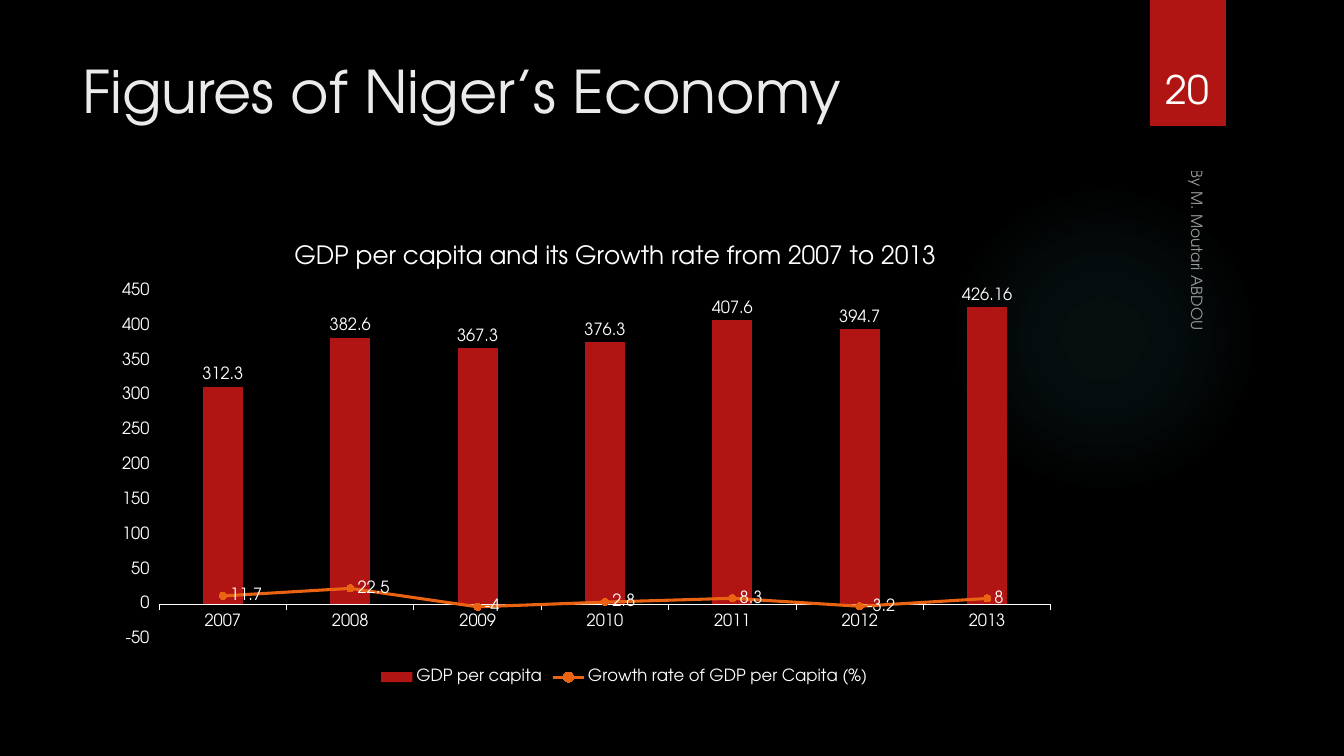
from copy import deepcopy
from dataclasses import dataclass

from pptx import Presentation
from pptx.chart.data import CategoryChartData
from pptx.dml.color import RGBColor
from pptx.enum.chart import (XL_AXIS_CROSSES, XL_CHART_TYPE, XL_LABEL_POSITION,
                             XL_LEGEND_POSITION, XL_MARKER_STYLE, XL_TICK_MARK)
from pptx.enum.shapes import MSO_SHAPE
from pptx.enum.text import MSO_ANCHOR, MSO_AUTO_SIZE, PP_ALIGN
from pptx.oxml import parse_xml
from pptx.oxml.ns import nsdecls, qn
from pptx.util import Pt

COLUMNS, DOT = XL_CHART_TYPE.COLUMN_CLUSTERED, XL_MARKER_STYLE.CIRCLE
ABOVE, BESIDE = XL_LABEL_POSITION.OUTSIDE_END, XL_LABEL_POSITION.RIGHT
TICK_OUT, AXIS_END = XL_TICK_MARK.OUTSIDE, XL_AXIS_CROSSES.MAXIMUM
LEGEND_BELOW = XL_LEGEND_POSITION.BOTTOM
OVAL, RECTANGLE = MSO_SHAPE.OVAL, MSO_SHAPE.RECTANGLE
TOP, BOTTOM, NO_FIT = MSO_ANCHOR.TOP, MSO_ANCHOR.BOTTOM, MSO_AUTO_SIZE.NONE
LEFT, CENTER = PP_ALIGN.LEFT, PP_ALIGN.CENTER

# Content
TITLE = "Figures of Niger’s Economy"
BYLINE = "By M. Moutari ABDOU"
PAGE_NUMBER = "20"
CHART_TITLE = "GDP per capita and its Growth rate from 2007 to 2013"
YEARS = [str(year) for year in range(2007, 2014)]
SERIES = {
    "GDP per capita": (312.3, 382.6, 367.3, 376.3, 407.6, 394.7, 426.16),
    "Growth rate of GDP per Capita (%)": (11.7, 22.5, -4, 2.8, 8.3, -3.2, 8),
}

# Places in px: left, top, width, height
PAGE_SIZE = (1344, 756)
GLOW = (949, 184, 310, 310)
BADGE = (1150, 0, 76, 126)
TITLE_BOX = (72, 50, 1037, 154)
BYLINE_BOX = (987, 356, 425, 33)
NUMBER_BOX = (1141, 32, 93, 85)
CHART_BOX = (122, 226, 986, 463)
PLOT_BOX = (141, 291, 909, 348)
CHART_TITLE_AT = (274, 238)
GLOW_STOPS = ((0, 7), (36, 6), (69, 0))  # position %, opacity %


@dataclass(frozen=True)
class Theme:
    font: str = "TeX Gyre Adventor"
    background: str = "000000"
    text: str = "FFFFFF"
    heading: str = "EBEBEB"
    red: str = "B01513"
    orange: str = "EA6312"
    glow: str = "50B9C1"
    title_size: int = 42
    number_size: int = 28
    chart_title_size: int = 18
    chart_size: int = 12
    byline_size: int = 11


THEME = Theme()


def px(*lengths):
    return [round(length * 914400 / 100.8) for length in lengths]


def paint(fill, color):
    fill.solid()
    fill.fore_color.rgb = RGBColor.from_string(color)


def style_font(font, size, color=THEME.text):
    font.name, font.size, font.bold = THEME.font, Pt(size), False
    font.color.rgb = RGBColor.from_string(color)


def write(frame, text, size, color=THEME.text, anchor=BOTTOM, align=LEFT):
    frame.word_wrap, frame.auto_size = True, NO_FIT
    frame.vertical_anchor = anchor
    para = frame.paragraphs[0]
    para.alignment = align
    span = para.add_run()
    span.text = text
    style_font(span.font, size, color)
    return span


def add_panel(page, kind, place):
    panel = page.shapes.add_shape(kind, *px(*place))
    panel.shadow.inherit = False
    panel.line.fill.background()
    return panel


def set_layout(parent, index, left, top, width=None, height=None, inner=False):
    """Place a chart part by fractions of the chart box."""
    old = parent.find(qn("c:layout"))
    if old is not None:
        parent.remove(old)
    chart_left, chart_top, chart_width, chart_height = CHART_BOX
    parts = '<c:layoutTarget val="inner"/>' if inner else ""
    parts += '<c:xMode val="edge"/><c:yMode val="edge"/>'
    parts += f'<c:x val="{(left - chart_left) / chart_width:.3f}"/>'
    parts += f'<c:y val="{(top - chart_top) / chart_height:.3f}"/>'
    if width:
        parts += f'<c:w val="{width / chart_width:.3f}"/>'
        parts += f'<c:h val="{height / chart_height:.3f}"/>'
    parent.insert(index, parse_xml(
        f'<c:layout {nsdecls("c")}><c:manualLayout>{parts}</c:manualLayout></c:layout>'))


def move_to_line(bar_plot):
    """Turn the second column series into a line on the same axes."""
    bars = bar_plot._element
    growth = bars.findall(qn("c:ser"))[1]
    invert = growth.find(qn("c:invertIfNegative"))
    if invert is not None:
        growth.remove(invert)
    lines = parse_xml(f'<c:lineChart {nsdecls("c")}><c:grouping val="standard"/>'
                      '<c:varyColors val="0"/></c:lineChart>')
    lines.append(growth)
    lines.append(parse_xml(f'<c:marker {nsdecls("c")} val="1"/>'))
    for axis_id in bars.findall(qn("c:axId")):
        lines.append(deepcopy(axis_id))
    bars.addnext(lines)


def label_values(series, position):
    labels = series.data_labels
    labels.show_value, labels.position = True, position
    style_font(labels.font, THEME.chart_size)


def add_chart(page):
    data = CategoryChartData()
    data.categories = YEARS
    for name, values in SERIES.items():
        data.add_series(name, values)
    chart = page.shapes.add_chart(COLUMNS, *px(*CHART_BOX), data).chart
    style_font(chart.font, THEME.chart_size)

    # Title, legend and plot area
    chart.has_title = True
    heading = chart.chart_title.text_frame.paragraphs[0].add_run()
    heading.text = CHART_TITLE
    style_font(heading.font, THEME.chart_title_size)
    set_layout(chart.element.xpath("c:chart/c:title")[0], 1, *CHART_TITLE_AT)
    set_layout(chart.element.xpath("c:chart/c:plotArea")[0], 0, *PLOT_BOX, inner=True)
    chart.has_legend = True
    chart.legend.position, chart.legend.include_in_layout = LEGEND_BELOW, False
    style_font(chart.legend.font, THEME.chart_size)

    # Axes
    for axis in (chart.category_axis, chart.value_axis):
        axis.has_major_gridlines = False
        axis.major_tick_mark = TICK_OUT
        style_font(axis.tick_labels.font, THEME.chart_size)
    chart.category_axis.crosses = AXIS_END
    paint(chart.category_axis.format.line.fill, THEME.text)
    chart.category_axis.format.line.width = Pt(0.75)
    values = chart.value_axis
    values.minimum_scale, values.maximum_scale, values.major_unit = -50, 450, 50
    values.format.line.fill.background()

    # Columns and growth line
    bar_plot = chart.plots[0]
    bar_plot.gap_width, bar_plot.overlap, bar_plot.vary_by_categories = 219, -27, False
    move_to_line(bar_plot)
    income = chart.plots[0].series[0]
    paint(income.format.fill, THEME.red)
    label_values(income, ABOVE)
    growth = chart.plots[1].series[0]
    growth.smooth = False
    paint(growth.format.line.fill, THEME.orange)
    growth.format.line.width = Pt(2.25)
    growth.marker.style, growth.marker.size = DOT, 5
    paint(growth.marker.format.fill, THEME.orange)
    paint(growth.marker.format.line.fill, THEME.orange)
    label_values(growth, BESIDE)


def main():
    deck = Presentation()
    deck.slide_width, deck.slide_height = px(*PAGE_SIZE)
    page = deck.slides.add_slide(deck.slide_layouts[5])
    paint(page.background.fill, THEME.background)

    # Glow and page badge
    glow = add_panel(page, OVAL, GLOW)
    glow.fill.background()
    stops = "".join(
        f'<a:gs pos="{place * 1000}"><a:srgbClr val="{THEME.glow}">'
        f'<a:alpha val="{opacity * 1000}"/></a:srgbClr></a:gs>'
        for place, opacity in GLOW_STOPS)
    no_fill = glow._element.spPr.find(qn("a:noFill"))
    no_fill.addnext(parse_xml(
        f'<a:gradFill {nsdecls("a")}><a:gsLst>{stops}</a:gsLst><a:path path="circle">'
        '<a:fillToRect l="50000" t="50000" r="50000" b="50000"/></a:path></a:gradFill>'))
    glow._element.spPr.remove(no_fill)
    paint(add_panel(page, RECTANGLE, BADGE).fill, THEME.red)

    # Title, byline and page number
    title = page.shapes.title
    title.left, title.top, title.width, title.height = px(*TITLE_BOX)
    write(title.text_frame, TITLE, THEME.title_size, THEME.heading, TOP)
    byline = page.shapes.add_textbox(*px(*BYLINE_BOX))
    byline.rotation = 90
    span = write(byline.text_frame, BYLINE, THEME.byline_size)
    span._r.xpath(".//a:srgbClr")[0].append(
        parse_xml(f'<a:alpha {nsdecls("a")} val="60000"/>'))
    number = page.shapes.add_textbox(*px(*NUMBER_BOX))
    write(number.text_frame, PAGE_NUMBER, THEME.number_size, align=CENTER)

    add_chart(page)
    deck.save("out.pptx")


if __name__ == "__main__":
    main()
